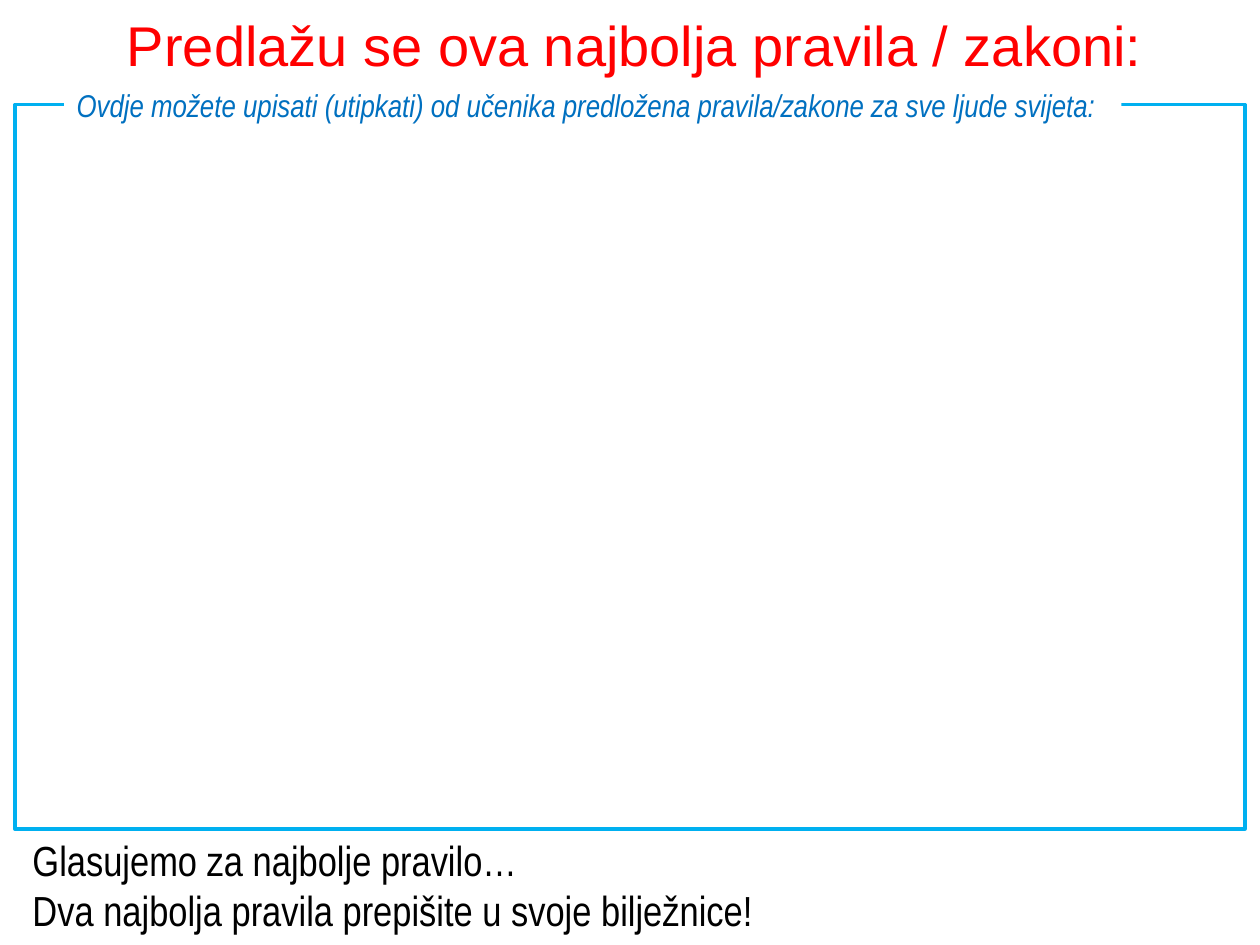
"""Builds a classroom slide for collecting and voting on proposed rules."""
from dataclasses import dataclass

from pptx import Presentation
from pptx.dml.color import RGBColor
from pptx.enum import shapes, text
from pptx.util import Inches, Pt


@dataclass(frozen=True)
class Theme:
    red: str = "FF0000"
    black: str = "000000"
    sky: str = "00B0F0"
    blue: str = "0070C0"
    white: str = "FFFFFF"
    wide: str = "Arial"
    narrow: str = "Arial Narrow"
    title: int = 32
    body: int = 24
    note: int = 18
    border: int = 2


THEME = Theme()


def place(shape, left, top, width, height):
    shape.left, shape.top = Inches(left), Inches(top)
    shape.width, shape.height = Inches(width), Inches(height)


def write(shape, lines, size, font, color, align=text.PP_ALIGN.LEFT,
          anchor=text.MSO_ANCHOR.TOP, italic=False):
    frame = shape.text_frame
    frame.word_wrap = True
    frame.auto_size = text.MSO_AUTO_SIZE.NONE
    frame.vertical_anchor = anchor
    for index, line in enumerate(lines):
        para = frame.add_paragraph() if index else frame.paragraphs[0]
        para.alignment = align
        span = para.add_run()
        span.text = line
        span.font.size = Pt(size)
        span.font.name = font
        span.font.italic = italic
        span.font.color.rgb = RGBColor.from_string(color)


def add_title(page, line, *area):
    title = page.shapes.title
    place(title, *area)
    write(title, [line], THEME.title, THEME.wide, THEME.red, text.PP_ALIGN.CENTER)


def add_box(page, *area, fill=None, line=None):
    box = page.shapes.add_shape(shapes.MSO_SHAPE.RECTANGLE, *map(Inches, area))
    box.shadow.inherit = False
    if fill:
        box.fill.solid()
        box.fill.fore_color.rgb = RGBColor.from_string(fill)
    else:
        box.fill.background()
    if line:
        box.line.color.rgb = RGBColor.from_string(line)
        box.line.width = Pt(THEME.border)
    else:
        box.line.fill.background()
    return box


def main():
    deck = Presentation()
    deck.slide_width, deck.slide_height = Inches(10), Inches(7.5)
    page = deck.slides.add_slide(deck.slide_layouts[5])

    add_title(page, "Predlažu se ova najbolja pravila / zakoni:", 0.04, 0.03, 10, 0.64)

    voting = page.shapes.add_textbox(*map(Inches, (0.16, 6.57, 9.53, 0.91)))
    write(voting, ["Glasujemo za najbolje pravilo…",
                   "Dva najbolja pravila prepišite u svoje bilježnice!"],
          THEME.body, THEME.narrow, THEME.black)

    add_box(page, 0.12, 0.83, 9.76, 5.75, line=THEME.sky)

    caption = add_box(page, 0.51, 0.63, 8.39, 0.4, fill=THEME.white)
    write(caption, ["Ovdje možete upisati (utipkati) od učenika predložena "
                    "pravila/zakone za sve ljude svijeta:"],
          THEME.note, THEME.narrow, THEME.blue,
          anchor=text.MSO_ANCHOR.MIDDLE, italic=True)

    deck.save("out.pptx")


if __name__ == "__main__":
    main()
